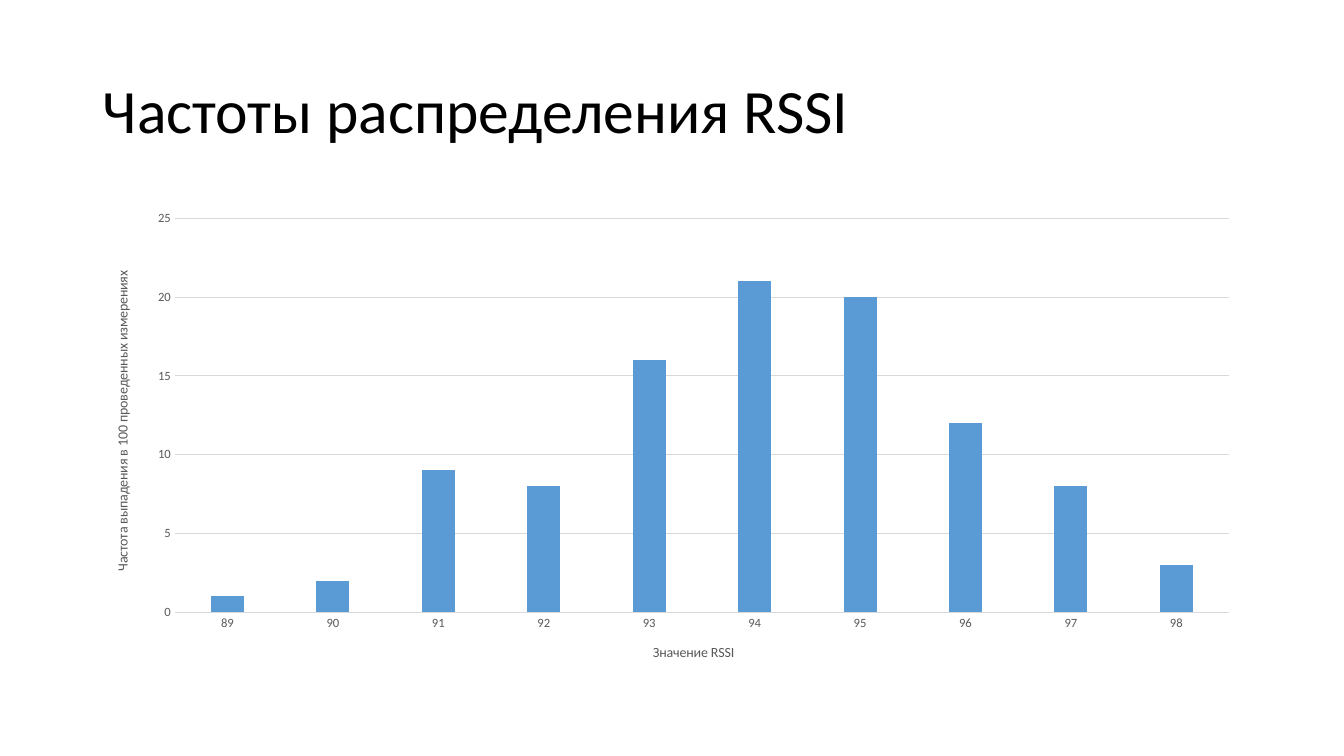
from pptx import Presentation
from pptx.chart.data import CategoryChartData
from pptx.dml.color import RGBColor
from pptx.enum.chart import XL_CHART_TYPE, XL_TICK_MARK
from pptx.enum.text import MSO_ANCHOR, PP_ALIGN
from pptx.util import Inches, Pt

COLUMNS = XL_CHART_TYPE.COLUMN_CLUSTERED
NO_TICKS = XL_TICK_MARK.NONE
MIDDLE = MSO_ANCHOR.MIDDLE
LEFT = PP_ALIGN.LEFT
TITLE_ONLY_LAYOUT = 5

RSSI_VALUES = range(89, 99)
FREQUENCIES = (1, 2, 9, 8, 16, 21, 20, 12, 8, 3)


def color(hex_string):
    return RGBColor.from_string(hex_string)


def format_font(font, size, hex_string, name="Calibri"):
    font.name = name
    font.size = Pt(size)
    font.bold = False
    font.color.rgb = color(hex_string)


def write_text(text_frame, text, size, hex_string, align=None, line_spacing=None):
    paragraph = text_frame.paragraphs[0]
    paragraph.alignment = align
    paragraph.line_spacing = line_spacing
    run = paragraph.add_run()
    run.text = text
    format_font(run.font, size, hex_string)


class SlideBuilder:
    """Holds the current slide and its chart style."""

    text_color = "000000"
    label_color = "595959"
    line_color = "D9D9D9"
    bar_color = "5B9BD5"

    def __init__(self, slide):
        self.slide = slide

    def title(self, text, left, top, width, height):
        shape = self.slide.shapes.title
        shape.left, shape.top = Inches(left), Inches(top)
        shape.width, shape.height = Inches(width), Inches(height)
        shape.text_frame.vertical_anchor = MIDDLE
        shape.text_frame.word_wrap = True
        write_text(shape.text_frame, text, 44, self.text_color,
                   align=LEFT, line_spacing=0.9)

    def thin_line(self, line):
        line.color.rgb = color(self.line_color)
        line.width = Pt(0.75)

    def axis(self, axis, title):
        axis.major_tick_mark = axis.minor_tick_mark = NO_TICKS
        format_font(axis.tick_labels.font, 9, self.label_color)
        write_text(axis.axis_title.text_frame, title, 10, self.label_color)

    def column_chart(self, categories, values, category_title, value_title,
                     left, top, width, height):
        data = CategoryChartData()
        data.categories = [str(category) for category in categories]
        data.add_series("Series 1", values)
        chart = self.slide.shapes.add_chart(
            COLUMNS, Inches(left), Inches(top), Inches(width), Inches(height), data
        ).chart
        chart.has_legend = False
        chart.has_title = False
        format_font(chart.font, 10, self.text_color)

        plot = chart.plots[0]
        plot.gap_width = 219
        plot.overlap = -27
        plot.vary_by_categories = False
        fill = plot.series[0].format.fill
        fill.solid()
        fill.fore_color.rgb = color(self.bar_color)

        self.axis(chart.category_axis, category_title)
        self.thin_line(chart.category_axis.format.line)
        value_axis = chart.value_axis
        self.axis(value_axis, value_title)
        value_axis.minimum_scale, value_axis.maximum_scale = 0, 25
        value_axis.major_unit = 5
        value_axis.format.line.fill.background()
        self.thin_line(value_axis.major_gridlines.format.line)


def main():
    presentation = Presentation()
    presentation.slide_width = Inches(13.33)
    presentation.slide_height = Inches(7.5)
    layout = presentation.slide_layouts[TITLE_ONLY_LAYOUT]
    builder = SlideBuilder(presentation.slides.add_slide(layout))
    builder.title("Частоты распределения RSSI", 0.92, 0.4, 11.5, 1.45)
    builder.column_chart(
        RSSI_VALUES, FREQUENCIES, "Значение RSSI",
        "Частота выпадения в 100 проведенных измерениях", 0.92, 2, 11.5, 4.76)
    presentation.save("out.pptx")


if __name__ == "__main__":
    main()
